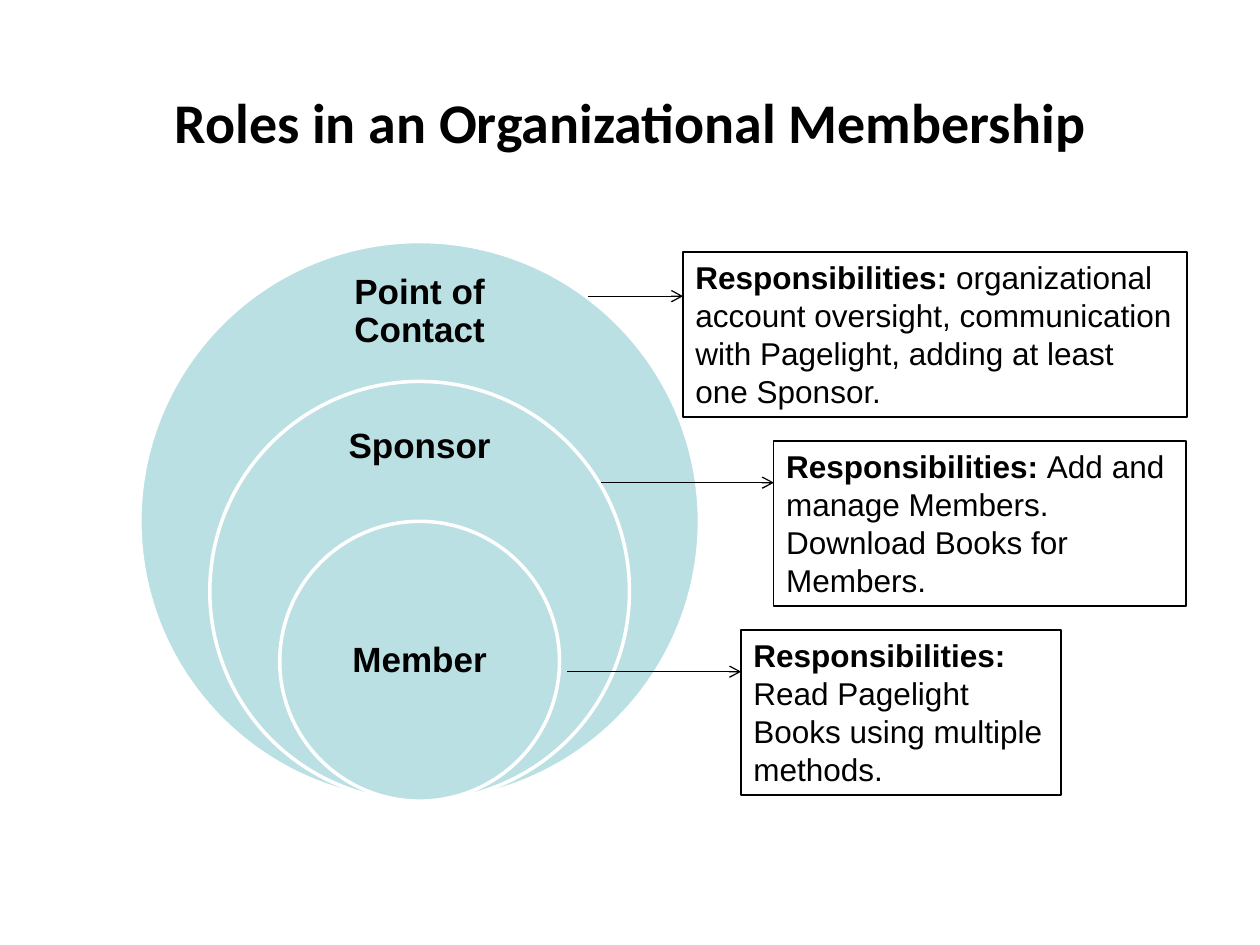
from lxml.etree import SubElement
from pptx import Presentation
from pptx.dml.color import RGBColor
from pptx.enum.shapes import MSO_CONNECTOR as Connector, MSO_SHAPE as Shape
from pptx.enum.text import MSO_ANCHOR as Anchor, MSO_AUTO_SIZE as AutoSize, PP_ALIGN as Align
from pptx.oxml.ns import qn
from pptx.util import Cm, Pt


def color(value):
    return RGBColor.from_string(value)


def apply(target, values):
    for name, value in values.items():
        setattr(target, name, value)


class RolesSlide:
    """Holds the slide and its style, and draws each kind of element."""

    ink, ring, paper = "000000", "BBE0E3", "FFFFFF"
    title_font = {"name": "Calibri", "size": Pt(32), "bold": True}
    role_font = {"name": "Arial", "size": Pt(20), "bold": True}
    lead_font = {"name": "Arial", "size": Pt(18), "bold": True}
    duty_font = {"name": "Arial", "size": Pt(18), "bold": False}
    role_frame = {"word_wrap": True, "vertical_anchor": Anchor.MIDDLE,
                  "margin_left": Cm(0.41), "margin_right": Cm(0.41),
                  "margin_top": Cm(0.41), "margin_bottom": Cm(0.41)}
    duty_frame = {"word_wrap": True, "vertical_anchor": Anchor.TOP,
                  "auto_size": AutoSize.SHAPE_TO_FIT_TEXT}

    def __init__(self, presentation):
        self.slide = presentation.slides.add_slide(presentation.slide_layouts[5])

    def add_text(self, paragraph, text, font):
        run = paragraph.add_run()
        run.text = text
        apply(run.font, font)
        run.font.color.rgb = color(self.ink)

    def outline(self, shape, line_color, width):
        shape.line.color.rgb = color(line_color)
        shape.line.width = Pt(width)

    def title(self, text):
        shape = self.slide.shapes.title
        apply(shape, {"left": Cm(0.43), "top": Cm(1.07), "width": Cm(24.56), "height": Cm(2.74)})
        shape.text_frame.vertical_anchor = Anchor.MIDDLE
        paragraph = shape.text_frame.paragraphs[0]
        paragraph.alignment = Align.CENTER
        self.add_text(paragraph, text, self.title_font)

    def circle(self, center, bottom, diameter):
        shape = self.slide.shapes.add_shape(
            Shape.OVAL, Cm(center - diameter / 2), Cm(bottom - diameter), Cm(diameter), Cm(diameter))
        shape.shadow.inherit = False
        shape.fill.solid()
        shape.fill.fore_color.rgb = color(self.ring)
        self.outline(shape, self.paper, 2)

    def role(self, text, center, top, height, width=3.96):
        shape = self.slide.shapes.add_textbox(Cm(center - width / 2), Cm(top), Cm(width), Cm(height))
        apply(shape.text_frame, self.role_frame)
        paragraph = shape.text_frame.paragraphs[0]
        apply(paragraph, {"alignment": Align.CENTER, "line_spacing": 0.9})
        self.add_text(paragraph, text, self.role_font)

    def duty(self, text, left, top, width, height=3.33):
        shape = self.slide.shapes.add_shape(Shape.RECTANGLE, Cm(left), Cm(top), Cm(width), Cm(height))
        shape.shadow.inherit = False
        shape.fill.background()
        self.outline(shape, self.ink, 0.75)
        apply(shape.text_frame, self.duty_frame)
        paragraph = shape.text_frame.paragraphs[0]
        paragraph.alignment = Align.LEFT
        self.add_text(paragraph, "Responsibilities: ", self.lead_font)
        self.add_text(paragraph, text, self.duty_font)

    def arrow(self, start, end, y):
        connector = self.slide.shapes.add_connector(Connector.STRAIGHT, Cm(start), Cm(y), Cm(end), Cm(y))
        self.outline(connector, self.ink, 0.75)
        properties = connector._element.spPr
        SubElement(properties.find(qn("a:ln")), qn("a:tailEnd"), type="arrow")
        SubElement(properties, qn("a:effectLst"))


def main():
    presentation = Presentation()
    apply(presentation, {"slide_width": Cm(25.4), "slide_height": Cm(19.05)})
    slide = RolesSlide(presentation)
    slide.title("Roles in an Organizational Membership")

    center, bottom, radius_step = 8.46, 16.15, 2.82
    roles = [("Point of Contact", 5.44, 1.7), ("Sponsor", 8.23, 1.57), ("Member", 11.91, 2.82)]
    for index, (text, top, height) in enumerate(roles):
        slide.circle(center, bottom, radius_step * (4 - index))
        slide.role(text, center, top, height)

    first_top, pitch = 5.08, 3.81
    duties = [
        ("organizational account oversight, communication with Pagelight, adding at least one Sponsor.",
         13.77, 10.16, 11.86, 5.97),
        ("Add and manage Members. Download Books for Members.", 15.6, 8.31, 12.12, 9.73),
        ("Read Pagelight Books using multiple methods.", 14.94, 6.45, 11.43, 13.54),
    ]
    for index, (text, left, width, arrow_start, arrow_y) in enumerate(duties):
        slide.duty(text, left, first_top + pitch * index, width)
        slide.arrow(arrow_start, left, arrow_y)

    presentation.save("out.pptx")


if __name__ == "__main__":
    main()
